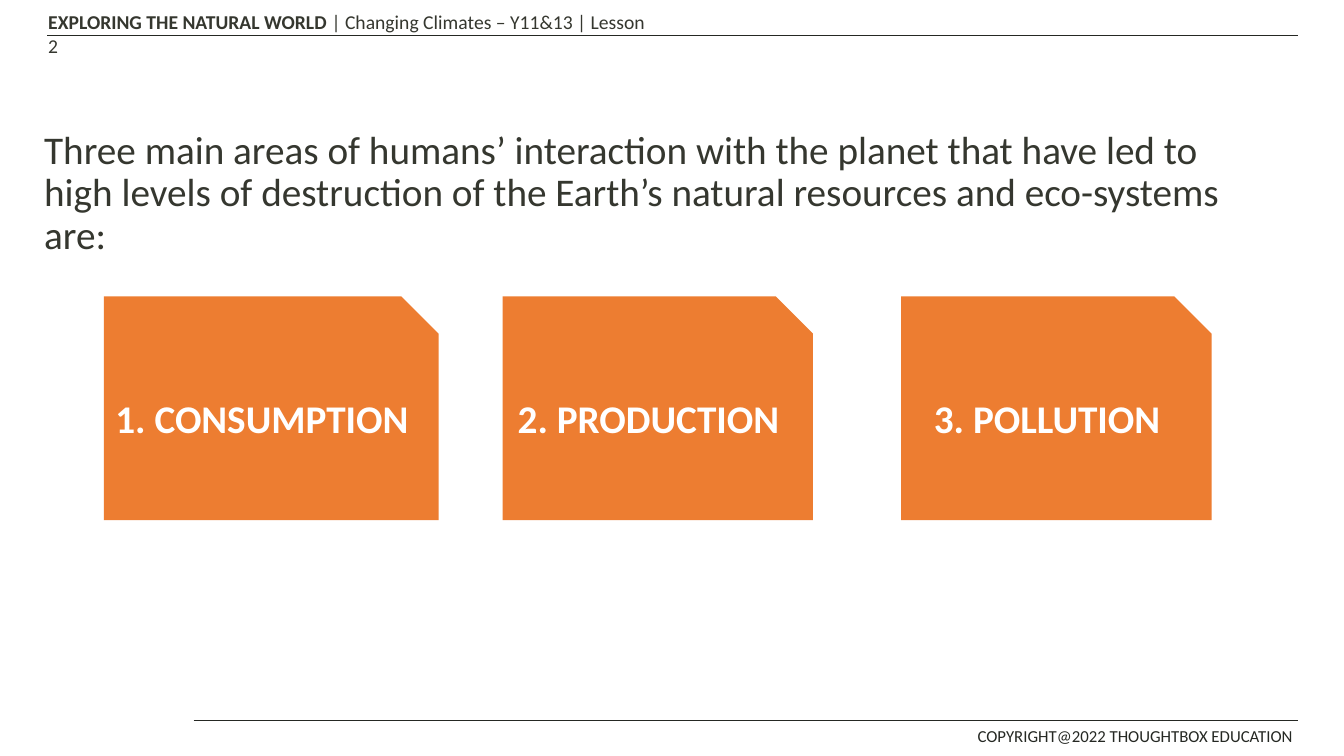
from dataclasses import dataclass

from lxml import etree
from pptx import Presentation
from pptx import util as u
from pptx.dml.color import RGBColor
from pptx.enum import shapes, text
from pptx.oxml import ns

SLIDE_WIDTH = u.Inches(13.33)
SLIDE_HEIGHT = u.Inches(7.5)
COLORS = {"rule": "252823", "ink": "35372F", "card": "ED7D31", "white": "FFFFFF"}
FONT = "Calibri"

# Every position and length below is a percentage of the slide's width or height.
CARD_LEFT, CARD_PITCH = 7.73, 29.66
CARD_TOP, CARD_HEIGHT = 39.2, 29.6


@dataclass(frozen=True)
class Box:
    left: float
    top: float
    width: float
    height: float

    def lengths(self) -> tuple:
        return across(self.left), down(self.top), across(self.width), down(self.height)


@dataclass(frozen=True)
class Run:
    words: str
    size: int
    color: str
    bold: bool = False


@dataclass(frozen=True)
class TextBlock:
    box: Box
    runs: tuple
    frame_format: dict
    paragraph_format: dict


@dataclass(frozen=True)
class Rule:
    start: float
    end: float
    top: float


@dataclass(frozen=True)
class Card:
    label: str
    width: float


GROWING = {"auto_size": text.MSO_AUTO_SIZE.SHAPE_TO_FIT_TEXT}
MIDDLE = {"vertical_anchor": text.MSO_ANCHOR.MIDDLE}
CENTERED = {"alignment": text.PP_ALIGN.CENTER}

RULES = (Rule(3.53, 96.6, 4.67), Rule(14.4, 96.6, 95.33))
TEXT_BLOCKS = (
    TextBlock(
        Box(72, 95.33, 25.5, 4.13),
        (Run("COPYRIGHT@2022 THOUGHTBOX EDUCATION", 12, "rule"),),
        GROWING, {},
    ),
    TextBlock(
        Box(2.85, 0.67, 46.35, 4.53),
        (Run("EXPLORING THE NATURAL WORLD ", 14, "ink", True),
         Run("| Changing Climates – Y11&13 | Lesson 2", 14, "ink")),
        GROWING, {},
    ),
    TextBlock(
        Box(2.55, 17.33, 92.1, 16.67),
        (Run("Three main areas of humans’ interaction with the planet that have led to "
             "high levels of destruction of the Earth’s natural resources and "
             "eco-systems are:", 28, "ink"),),
        MIDDLE, {"line_spacing": 0.9},
    ),
)
CARDS = (Card("CONSUMPTION", 24.9), Card("PRODUCTION", 23.1), Card("POLLUTION", 23.1))


def across(percent: float) -> int:
    return round(SLIDE_WIDTH * percent / 100)


def down(percent: float) -> int:
    return round(SLIDE_HEIGHT * percent / 100)


def color(name: str) -> RGBColor:
    return RGBColor.from_string(COLORS[name])


def apply(target, values: dict) -> None:
    for name, value in values.items():
        setattr(target, name, value)


def write(shape, runs: tuple, frame_format: dict, paragraph_format: dict) -> None:
    frame = shape.text_frame
    apply(frame, {"word_wrap": True, **frame_format})
    paragraph = frame.paragraphs[0]
    apply(paragraph, paragraph_format)
    for item in runs:
        run = paragraph.add_run()
        run.text = item.words
        apply(run.font, {"name": FONT, "size": u.Pt(item.size), "bold": item.bold})
        run.font.color.rgb = color(item.color)


def draw_rule(slide, rule: Rule) -> None:
    connector = slide.shapes.add_connector(
        shapes.MSO_CONNECTOR.STRAIGHT,
        across(rule.start), down(rule.top), across(rule.end), down(rule.top),
    )
    connector.line.color.rgb = color("rule")
    connector.line.width = u.Pt(1)
    etree.SubElement(connector.element.spPr, ns.qn("a:effectLst"))


def draw_text(slide, block: TextBlock) -> None:
    shape = slide.shapes.add_textbox(*block.box.lengths())
    write(shape, block.runs, block.frame_format, block.paragraph_format)


def draw_card(slide, index: int, card: Card) -> None:
    box = Box(CARD_LEFT + index * CARD_PITCH, CARD_TOP, card.width, CARD_HEIGHT)
    shape = slide.shapes.add_shape(shapes.MSO_SHAPE.SNIP_1_RECTANGLE, *box.lengths())
    shape.shadow.inherit = False
    shape.fill.solid()
    shape.fill.fore_color.rgb = color("card")
    shape.line.fill.background()
    label = Run(f"{index + 1}. {card.label}", 28, "white", True)
    write(shape, (label,), MIDDLE, CENTERED)


def main() -> None:
    presentation = Presentation()
    apply(presentation, {"slide_width": SLIDE_WIDTH, "slide_height": SLIDE_HEIGHT})
    slide = presentation.slides.add_slide(presentation.slide_layouts[6])
    for rule in RULES:
        draw_rule(slide, rule)
    for block in TEXT_BLOCKS:
        draw_text(slide, block)
    for index, card in enumerate(CARDS):
        draw_card(slide, index, card)
    presentation.save("out.pptx")


if __name__ == "__main__":
    main()
